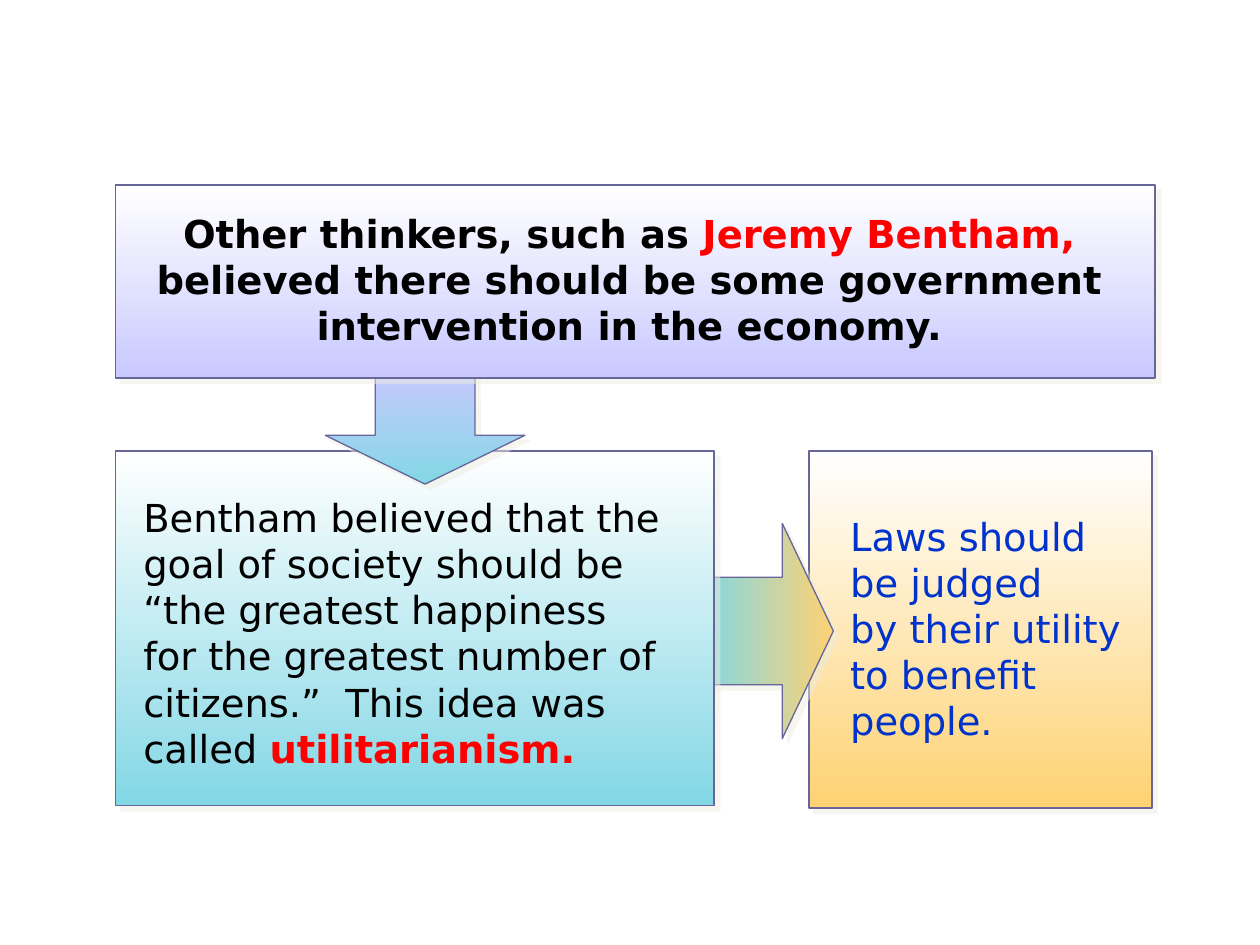
from lxml import etree
from pptx import Presentation
from pptx.dml.color import RGBColor
from pptx.enum import shapes, text
from pptx.oxml import ns
from pptx.util import Cm, Pt

WHITE = RGBColor(0xFF, 0xFF, 0xFF)
BLACK = RGBColor(0x00, 0x00, 0x00)
RED = RGBColor(0xFF, 0x00, 0x00)
BLUE = RGBColor(0x00, 0x33, 0xCC)
LAVENDER = RGBColor(0xC9, 0xC9, 0xFF)
AQUA = RGBColor(0x83, 0xD7, 0xE5)
GOLD = RGBColor(0xFE, 0xD2, 0x73)
OUTLINE = RGBColor(0x66, 0x66, 0x99)
SHADOW = RGBColor(0xEE, 0xEC, 0xE1)

RECTANGLE = shapes.MSO_SHAPE.RECTANGLE
ARROW = shapes.MSO_SHAPE.DOWN_ARROW
LEFT, CENTER = text.PP_ALIGN.LEFT, text.PP_ALIGN.CENTER

deck = Presentation()
deck.slide_width, deck.slide_height = Cm(25.4), Cm(19.05)
page = deck.slides.add_slide(deck.slide_layouts[6])


def add_gradient_shape(kind, place, colors, line_width):
    """Add a shape with a top-to-bottom gradient and a hard offset shadow."""
    shape = page.shapes.add_shape(kind, *map(Cm, place))
    shape.fill.gradient()
    shape.fill.gradient_angle = 270
    for stop, color, position in zip(shape.fill.gradient_stops, colors, (0, 1)):
        stop.color.rgb, stop.position = color, position
    shape.line.color.rgb, shape.line.width = OUTLINE, Pt(line_width)
    shape.shadow.inherit = False
    effects = shape._element.spPr.find(ns.qn("a:effectLst"))
    shadow = etree.SubElement(effects, ns.qn("a:outerShdw"), blurRad="0",
                              dist=str(Pt(4.2)), dir=str(45 * 60000),
                              algn="ctr", rotWithShape="0")
    tint = etree.SubElement(shadow, ns.qn("a:srgbClr"), val=str(SHADOW))
    etree.SubElement(tint, ns.qn("a:alpha"), val="50000")
    return shape


def add_words(place, align, spans):
    """Add a text box from (words, colour, bold) spans; a newline breaks the line."""
    box = page.shapes.add_textbox(*map(Cm, place))
    box.text_frame.word_wrap = True
    box.text_frame.auto_size = text.MSO_AUTO_SIZE.SHAPE_TO_FIT_TEXT
    para = box.text_frame.paragraphs[0]
    para.alignment = align
    for words, color, bold in spans:
        for number, line in enumerate(words.split("\n")):
            if number:
                para.add_line_break()
            span = para.add_run()
            span.text = line
            span.font.color.rgb = color
            style = {"name": "DejaVu Sans", "size": Pt(22), "bold": bold}
            for name, value in style.items():
                setattr(span.font, name, value)
    return box


# Conclusion
add_gradient_shape(RECTANGLE, (16.31, 9.1, 6.91, 7.19), (WHITE, GOLD), 1)
conclusion = add_words((16.71, 10.21, 6.55, 4.98), LEFT, [
    ("Laws should\nbe judged\nby their utility to benefit people.", BLUE, False)])
conclusion.text_frame.margin_left = Cm(0.43)

# Bentham's idea, leading to the conclusion
right_arrow = add_gradient_shape(ARROW, (13.31, 11.4, 4.34, 2.64), (AQUA, GOLD), 0.75)
right_arrow.rotation = 270
right_arrow.adjustments[1] = 0.39
add_gradient_shape(RECTANGLE, (2.33, 9.1, 12.07, 7.14), (WHITE, AQUA), 1)
add_words((2.64, 9.83, 11.05, 5.92), LEFT, [
    ("Bentham believed that the goal of society should be “the greatest "
     "happiness for the greatest number of citizens.”  This idea was called ",
     BLACK, False),
    ("utilitarianism.", RED, True)])

# Opening statement, leading to the idea
down_arrow = add_gradient_shape(ARROW, (6.56, 7.42, 4.02, 2.34), (LAVENDER, AQUA), 0.75)
down_arrow.adjustments[1] = 0.42
add_gradient_shape(RECTANGLE, (2.33, 3.73, 20.96, 3.89), (WHITE, LAVENDER), 1)
add_words((1.93, 4.11, 21.51, 3.1), CENTER, [
    ("Other thinkers, such as ", BLACK, True),
    ("Jeremy Bentham, ", RED, True),
    ("believed there should be some government intervention in the economy.",
     BLACK, True)])

deck.save("out.pptx")
